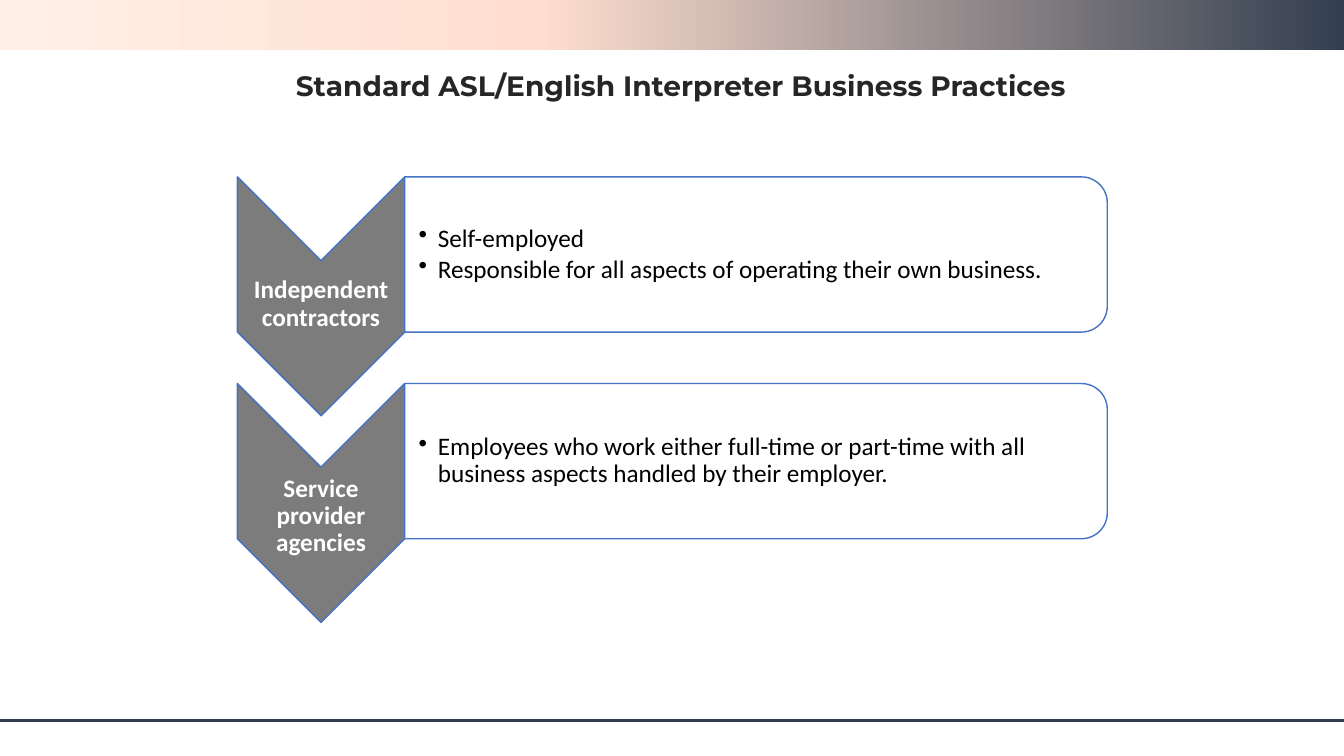
from copy import deepcopy

from lxml.etree import SubElement
from pptx import Presentation
from pptx.dml.color import RGBColor
from pptx.enum.shapes import MSO_CONNECTOR, MSO_SHAPE
from pptx.enum.text import MSO_ANCHOR, PP_ALIGN
from pptx.oxml.ns import qn
from pptx.util import Inches, Pt

COLS, ROWS = 80, 45
CELL = Inches(1) / 6
HUES = {
    "navy": "333F50", "peach": "FFDFCF", "cream": "FFEFE7", "ink": "262626",
    "gray": "7C7C7C", "blue": "4472C4", "white": "FFFFFF", "black": "000000",
}
ITEMS = [
    ("Independent contractors", 5.46,
     ["Self-employed",
      "Responsible for all aspects of operating their own business."]),
    ("Service provider agencies", 5.76,
     ["Employees who work either full-time or part-time with all business "
      "aspects handled by their employer."]),
]
LEFT, TOP, PITCH = 14.13, 10.53, 12.3
ARROW_W, ARROW_H = 9.96, 14.22
PANEL_W, PANEL_H = 41.82, 9.24


def cells(*counts):
    return [round(count * CELL) for count in counts]


def hue(name):
    return RGBColor.from_string(HUES[name])


def style(para, size, color, font="Calibri", bold=False):
    for run in para.runs:
        run.font.size = Pt(size)
        run.font.name = font
        run.font.bold = bold
        run.font.color.rgb = hue(color)


def add_bar(slide):
    bar = slide.shapes.add_shape(MSO_SHAPE.RECTANGLE, *cells(0, 0, COLS, 3))
    bar.shadow.inherit = False
    bar.line.fill.background()
    bar.fill.gradient()
    bar.fill.gradient_angle = 180
    stops = bar._element.spPr.find(".//" + qn("a:gsLst"))
    stops.append(deepcopy(stops[-1]))
    blend = [(0, "navy"), (0.6, "peach"), (1, "cream")]
    for stop, (place, name) in zip(bar.fill.gradient_stops, blend):
        stop.position = place
        stop.color.rgb = hue(name)


def add_rule(slide, row):
    rule = slide.shapes.add_connector(
        MSO_CONNECTOR.STRAIGHT, *cells(0, row, COLS, row))
    rule.line.color.rgb = hue("navy")
    rule.line.width = Pt(1.75)
    SubElement(rule._element.spPr, qn("a:effectLst"))


def set_title(slide, text):
    title = slide.shapes.title
    title.left, title.top, title.width, title.height = cells(
        15.3, 3.78, 50.46, 3.6)
    frame = title.text_frame
    frame.text = text
    frame.word_wrap = True
    frame.vertical_anchor = MSO_ANCHOR.TOP
    para = frame.paragraphs[0]
    para.alignment = PP_ALIGN.CENTER
    style(para, 20, "ink", "Montserrat", True)


def add_turned(slide, kind, left, top, width, height, fill):
    shape = slide.shapes.add_shape(kind, *cells(
        left + (width - height) / 2, top + (height - width) / 2,
        height, width))
    shape.rotation = 90
    shape.shadow.inherit = False
    shape.fill.solid()
    shape.fill.fore_color.rgb = hue(fill)
    shape.line.color.rgb = hue("blue")
    shape.line.width = Pt(1)
    return shape


def add_text(slide, area, lines, inset=1):
    frame = slide.shapes.add_textbox(*cells(*area)).text_frame
    frame.word_wrap = True
    frame.vertical_anchor = MSO_ANCHOR.MIDDLE
    frame.margin_left = Pt(inset)
    frame.margin_right = frame.margin_top = frame.margin_bottom = Pt(1)
    frame.text = "\n".join(lines)
    for para in frame.paragraphs:
        para.line_spacing = 0.9
    return frame.paragraphs


def add_label(slide, top, text):
    para = add_text(slide, (LEFT, top, ARROW_W, 4.26), [text])[0]
    para.alignment = PP_ALIGN.CENTER
    style(para, 18, "white", bold=True)


def add_list(slide, left, top, lines):
    for para in add_text(slide, (left, top, 41.34, 8.34), lines, 10):
        para.level = 1
        para.space_after = Pt(2.7)
        props = para._p.get_or_add_pPr()
        props.set("marL", str(Inches(0.19)))
        props.set("indent", str(-Inches(0.19)))
        SubElement(props, qn("a:buChar")).set("char", "•")
        style(para, 18, "black")


def add_item(slide, index, label, drop, lines):
    top = TOP + index * PITCH
    side = LEFT + ARROW_W
    add_turned(slide, MSO_SHAPE.CHEVRON, LEFT, top, ARROW_W, ARROW_H, "gray")
    add_label(slide, top + drop, label)
    panel = add_turned(slide, MSO_SHAPE.ROUND_2_SAME_RECTANGLE,
                       side, top, PANEL_W, PANEL_H, "white")
    color = panel._element.spPr.find(qn("a:solidFill"))[0]
    SubElement(color, qn("a:alpha")).set("val", "90000")
    add_list(slide, side, top + 0.45, lines)


def main():
    deck = Presentation()
    deck.slide_width, deck.slide_height = cells(COLS, ROWS)
    slide = deck.slides.add_slide(deck.slide_layouts[5])
    add_bar(slide)
    add_rule(slide, 42.9)
    set_title(slide, "Standard ASL/English Interpreter Business Practices")
    for index, item in enumerate(ITEMS):
        add_item(slide, index, *item)
    deck.save("out.pptx")


if __name__ == "__main__":
    main()
